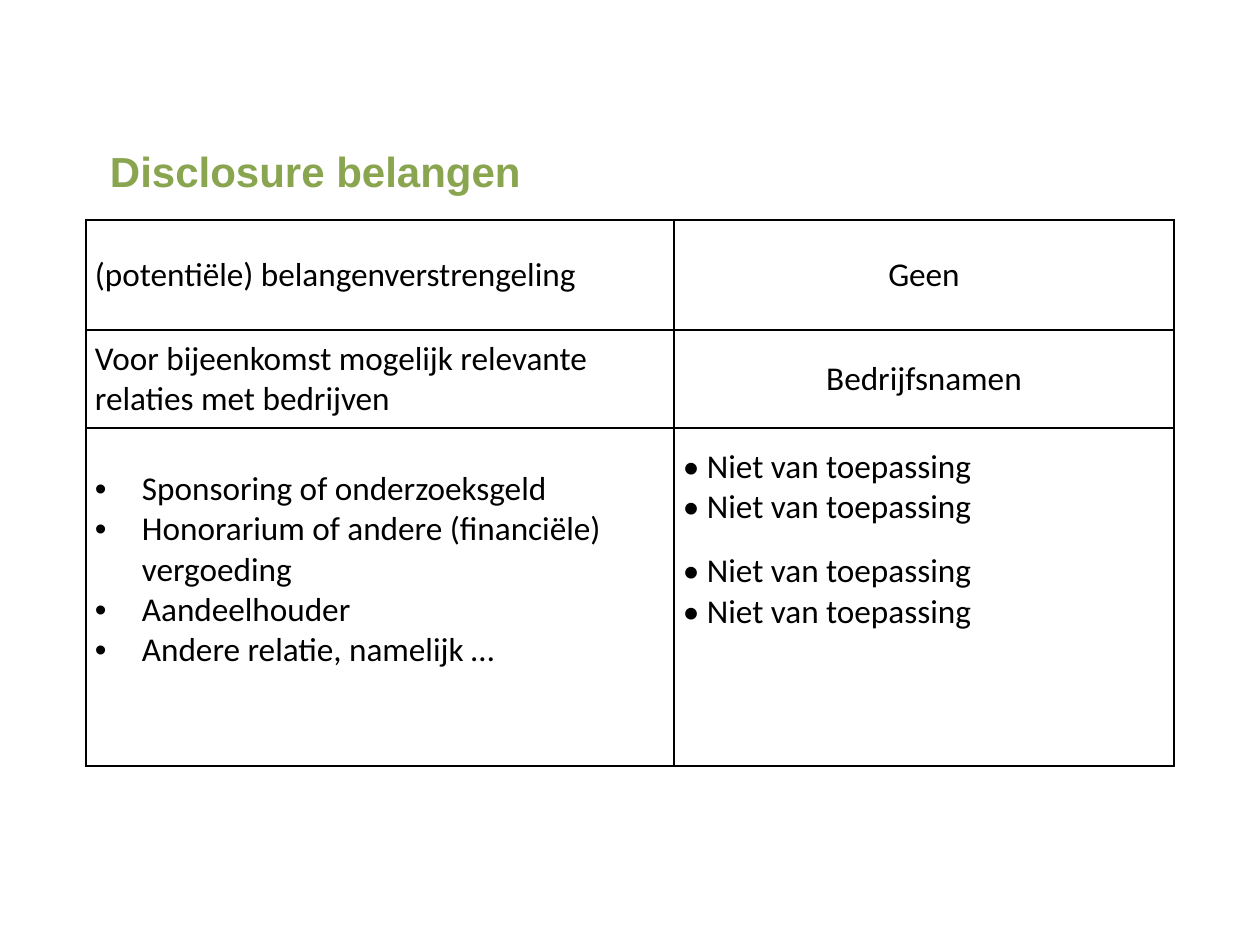
from lxml import etree
from pptx import Presentation
from pptx import util as u
from pptx.dml.color import RGBColor
from pptx.enum import text
from pptx.oxml import ns

BLACK = RGBColor(0x00, 0x00, 0x00)
GREEN = RGBColor(0x89, 0xA5, 0x4F)
EMU_PER_PX = 914400 / 126
MIDDLE = text.MSO_ANCHOR.MIDDLE
TOP = text.MSO_ANCHOR.TOP
LEFT = text.PP_ALIGN.LEFT
CENTER = text.PP_ALIGN.CENTER


def px(length):
    return u.Emu(round(length * EMU_PER_PX))


def apply(target, values):
    for name, value in values.items():
        setattr(target, name, value)


class DisclosureSlide:
    title_font = {"name": "Arial", "size": u.Pt(24), "bold": True}
    body_font = {"name": "Calibri", "size": u.Pt(19)}
    hanging = 47
    side_margin = 9

    def __init__(self, presentation):
        self.slide = presentation.slides.add_slide(presentation.slide_layouts[6])

    def add_wording(self, paragraph, wording, font, color):
        run = paragraph.add_run()
        run.text = wording
        apply(run.font, font)
        run.font.color.rgb = color

    def title(self, wording, left, top, width, height):
        frame = self.slide.shapes.add_textbox(*map(px, (left, top, width, height))).text_frame
        apply(frame, {"word_wrap": True, "vertical_anchor": MIDDLE, "margin_left": 0,
                      "margin_right": 0, "margin_top": 0, "margin_bottom": 0})
        self.add_wording(frame.paragraphs[0], wording, self.title_font, GREEN)

    def bullet(self, paragraph):
        properties = paragraph._p.get_or_add_pPr()
        properties.set("marL", str(px(self.hanging)))
        properties.set("indent", str(-px(self.hanging)))
        etree.SubElement(properties, ns.qn("a:buFont")).set("typeface", "Arial")
        etree.SubElement(properties, ns.qn("a:buChar")).set("char", "•")

    def borders(self, cell):
        properties = cell._tc.get_or_add_tcPr()
        for side in ("lnL", "lnR", "lnT", "lnB"):
            line = etree.SubElement(properties, ns.qn(f"a:{side}"), w=str(u.Pt(1)))
            fill = etree.SubElement(line, ns.qn("a:solidFill"))
            etree.SubElement(fill, ns.qn("a:srgbClr"), val=str(BLACK))

    def cell(self, cell, lines, align=LEFT, anchor=MIDDLE, margin_top=0, bullets=False, gaps=None):
        self.borders(cell)
        cell.fill.background()
        apply(cell, {"vertical_anchor": anchor, "margin_left": px(self.side_margin),
                     "margin_right": px(self.side_margin), "margin_top": px(margin_top),
                     "margin_bottom": 0})
        frame = cell.text_frame
        for index, wording in enumerate(lines):
            paragraph = frame.add_paragraph() if index else frame.paragraphs[0]
            if bullets:
                self.bullet(paragraph)
            paragraph.alignment = align
            if gaps and index in gaps:
                paragraph.space_before = u.Pt(gaps[index])
            self.add_wording(paragraph, wording, self.body_font, BLACK)

    def table(self, left, top, widths, heights, rows):
        grid = self.slide.shapes.add_table(
            len(heights), len(widths),
            *map(px, (left, top, sum(widths), sum(heights)))).table
        apply(grid, {"first_row": False, "horz_banding": False})
        for column, width in zip(grid.columns, widths):
            column.width = px(width)
        for row, height, contents in zip(grid.rows, heights, rows):
            row.height = px(height)
            for cell, content in zip(row.cells, contents):
                self.cell(cell, **content)


def main():
    presentation = Presentation()
    apply(presentation, {"slide_width": px(1260), "slide_height": px(945)})
    disclosure = DisclosureSlide(presentation)
    relations = ["Sponsoring of onderzoeksgeld",
                 "Honorarium of andere (financiële) vergoeding",
                 "Aandeelhouder",
                 "Andere relatie, namelijk …"]
    answers = ["• Niet van toepassing"] * len(relations)
    disclosure.table(86, 220, [588, 500], [110, 98, 338], [
        [{"lines": ["(potentiële) belangenverstrengeling"]},
         {"lines": ["Geen"], "align": CENTER}],
        [{"lines": ["Voor bijeenkomst mogelijk relevante relaties met bedrijven"]},
         {"lines": ["Bedrijfsnamen"], "align": CENTER}],
        [{"lines": relations, "anchor": TOP, "margin_top": 41, "bullets": True},
         {"lines": answers, "anchor": TOP, "margin_top": 19, "gaps": {2: 13.5}}],
    ])
    disclosure.title("Disclosure belangen", 110, 92, 1087, 158)
    presentation.save("out.pptx")


if __name__ == "__main__":
    main()
